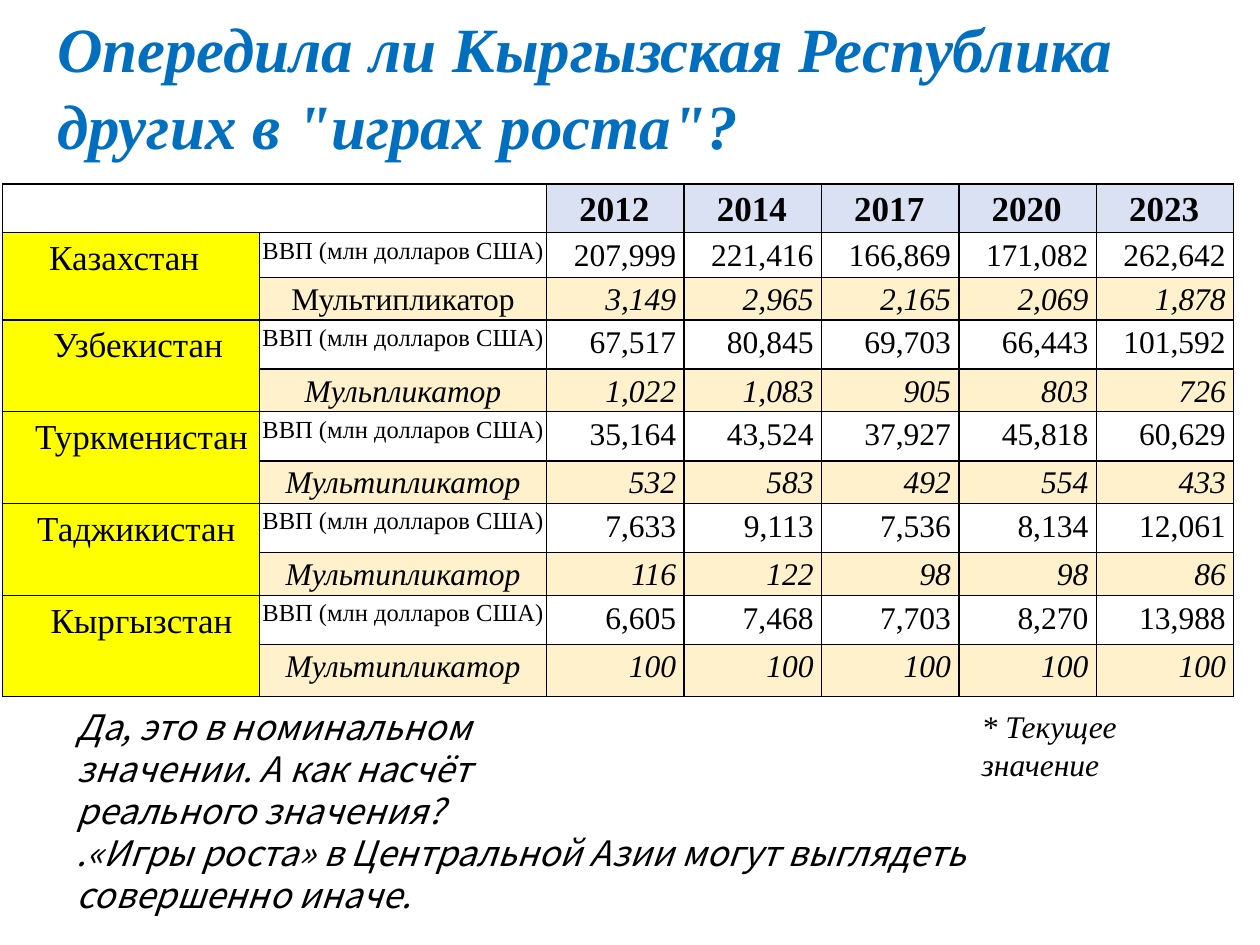
from dataclasses import dataclass

from lxml.etree import SubElement
from pptx import Presentation
from pptx.dml.color import RGBColor
from pptx.enum.text import MSO_ANCHOR, MSO_AUTO_SIZE, PP_ALIGN
from pptx.oxml.ns import qn
from pptx.util import Cm, Pt

COLORS = {
    "title": "006FC0",
    "text": "000000",
    "border": "000000",
    "header": "D9E1F3",
    "country": "FFFF00",
    "multiplier": "FFF1CC",
}
SERIF = "Times New Roman"
SANS = "Noto Sans CJK KR"
YEARS = ["2012", "2014", "2017", "2020", "2023"]
GDP_LABEL = "ВВП (млн долларов США)"
COLUMN_WIDTHS = [5.18, 5.79] + [2.77] * len(YEARS)


@dataclass
class Country:
    name: str
    indent: float
    gdp: str
    multiplier: str
    heights: tuple[float, float] = (0.99, 0.86)
    label: str = "Мультипликатор"
    label_italic: bool = True


@dataclass
class TextStyle:
    size: float
    font: str = SERIF
    color: str = "text"
    bold: bool = False
    italic: bool = False
    align: PP_ALIGN = PP_ALIGN.LEFT
    spacing: float | Pt = 1.17
    indent: float = 0
    right_indent: float = 0


COUNTRIES = [
    Country("Казахстан", 0.94, "207,999 221,416 166,869 171,082 262,642",
            "3,149 2,965 2,165 2,069 1,878", (0.9, 0.86), label_italic=False),
    Country("Узбекистан", 1.02, "67,517 80,845 69,703 66,443 101,592",
            "1,022 1,083 905 803 726", label="Мульпликатор"),
    Country("Туркменистан", 0.66, "35,164 43,524 37,927 45,818 60,629",
            "532 583 492 554 433"),
    Country("Таджикистан", 0.7, "7,633 9,113 7,536 8,134 12,061",
            "116 122 98 98 86"),
    Country("Кыргызстан", 0.97, "6,605 7,468 7,703 8,270 13,988",
            "100 100 100 100 100", (0.99, 1.05)),
]


def set_attributes(target, values: dict) -> None:
    for name, value in values.items():
        setattr(target, name, value)


def write_paragraph(paragraph, text: str, style: TextStyle) -> None:
    set_attributes(paragraph, {
        "alignment": style.align,
        "line_spacing": style.spacing,
        "space_before": Pt(0),
        "space_after": Pt(0),
    })
    properties = paragraph._p.get_or_add_pPr()
    for name, value in {"marL": Cm(style.indent), "marR": Cm(style.right_indent),
                        "indent": 0}.items():
        properties.set(name, str(int(value)))
    SubElement(properties, qn("a:buNone"))
    run = paragraph.add_run()
    run.text = text
    set_attributes(run.font, {
        "name": style.font,
        "size": Pt(style.size),
        "bold": style.bold,
        "italic": style.italic,
    })
    run.font.color.rgb = RGBColor.from_string(COLORS[style.color])


def fill_text_shape(shape, box: tuple, paragraphs: list) -> None:
    """Place the shape at box (left, top, width, height in cm) and write its text."""
    set_attributes(shape, dict(zip(("left", "top", "width", "height"), map(Cm, box))))
    frame = shape.text_frame
    set_attributes(frame, {
        "word_wrap": True,
        "auto_size": MSO_AUTO_SIZE.NONE,
        "vertical_anchor": MSO_ANCHOR.TOP,
        "margin_left": 0,
        "margin_top": Cm(0.03),
        "margin_right": 0,
        "margin_bottom": 0,
    })
    for index, (text, style) in enumerate(paragraphs):
        paragraph = frame.add_paragraph() if index else frame.paragraphs[0]
        write_paragraph(paragraph, text, style)


def format_cell(cell, fill: str | None) -> None:
    set_attributes(cell, {f"margin_{side}": 0 for side in ("left", "top", "right", "bottom")})
    if fill:
        cell.fill.solid()
        cell.fill.fore_color.rgb = RGBColor.from_string(COLORS[fill])
    else:
        cell.fill.background()
    properties = cell._tc.get_or_add_tcPr()
    for index, side in enumerate(("lnL", "lnR", "lnT", "lnB")):
        line = SubElement(properties, qn(f"a:{side}"), w=str(Pt(1)))
        color_fill = SubElement(line, qn("a:solidFill"))
        SubElement(color_fill, qn("a:srgbClr"), val=COLORS["border"])
        properties.insert(index, line)


def write_cell(cell, text: str, style: TextStyle) -> None:
    write_paragraph(cell.text_frame.paragraphs[0], text, style)


def write_values(table, row: int, values: str, italic: bool, spacing: float) -> None:
    style = TextStyle(18, italic=italic, align=PP_ALIGN.RIGHT,
                      spacing=spacing, right_indent=0.16)
    for column, value in enumerate(values.split(), start=2):
        write_cell(table.cell(row, column), value, style)


def add_gdp_table(slide) -> None:
    heights = [0.98] + [height for country in COUNTRIES for height in country.heights]
    frame = slide.shapes.add_table(
        len(heights), len(COLUMN_WIDTHS), Cm(0.05), Cm(3.71),
        Cm(sum(COLUMN_WIDTHS)), Cm(sum(heights)))
    table = frame.table
    set_attributes(table, {"first_row": False, "horz_banding": False})
    for column, width in zip(table.columns, COLUMN_WIDTHS):
        column.width = Cm(width)
    for index, (row, height) in enumerate(zip(table.rows, heights)):
        row.height = Cm(height)
        for column, cell in enumerate(row.cells):
            if index == 0:
                fill = "header" if column > 1 else None
            elif column == 0:
                fill = "country"
            else:
                fill = "multiplier" if index % 2 == 0 else None
            format_cell(cell, fill)

    table.cell(0, 0).merge(table.cell(0, 1))
    for column, year in enumerate(YEARS, start=2):
        write_cell(table.cell(0, column), year,
                   TextStyle(20, bold=True, spacing=1.15, indent=0.66))

    for index, country in enumerate(COUNTRIES):
        row = 1 + 2 * index
        table.cell(row, 0).merge(table.cell(row + 1, 0))
        write_cell(table.cell(row, 0), country.name, TextStyle(20, indent=country.indent))
        write_cell(table.cell(row, 1), GDP_LABEL, TextStyle(14, align=PP_ALIGN.CENTER))
        write_values(table, row, country.gdp, italic=False, spacing=1.17)
        write_cell(table.cell(row + 1, 1), country.label,
                   TextStyle(18, italic=country.label_italic,
                             align=PP_ALIGN.CENTER, spacing=1.14))
        write_values(table, row + 1, country.multiplier, italic=True, spacing=1.14)


def main() -> None:
    presentation = Presentation()
    set_attributes(presentation, {"slide_width": Cm(25.4), "slide_height": Cm(19.05)})
    slide = presentation.slides.add_slide(presentation.slide_layouts[1])

    title_style = TextStyle(36, color="title", bold=True, italic=True,
                            spacing=Pt(44), indent=0.03)
    fill_text_shape(slide.shapes.title, (1.12, 0.13, 23.16, 3.12), [
        ('Опередила ли Кыргызская Республика других в "играх роста"?', title_style)])

    add_gdp_table(slide)

    body = {"size": 20, "font": SANS, "italic": True, "spacing": Pt(24), "indent": 0.03}
    fill_text_shape(slide.placeholders[1], (1.52, 14.2, 20.29, 4.32), [
        ("Да, это в номинальном значении. А как насчёт реального значения?",
         TextStyle(**body, right_indent=11.2)),
        (".«Игры роста» в Центральной Азии могут выглядеть совершенно иначе.",
         TextStyle(**body))])

    note = slide.shapes.add_textbox(0, 0, 0, 0)
    fill_text_shape(note, (19.76, 14.2, 4.06, 1.57), [
        ("* Текущее значение",
         TextStyle(18, italic=True, spacing=Pt(22), indent=0.03))])

    presentation.save("out.pptx")


if __name__ == "__main__":
    main()
